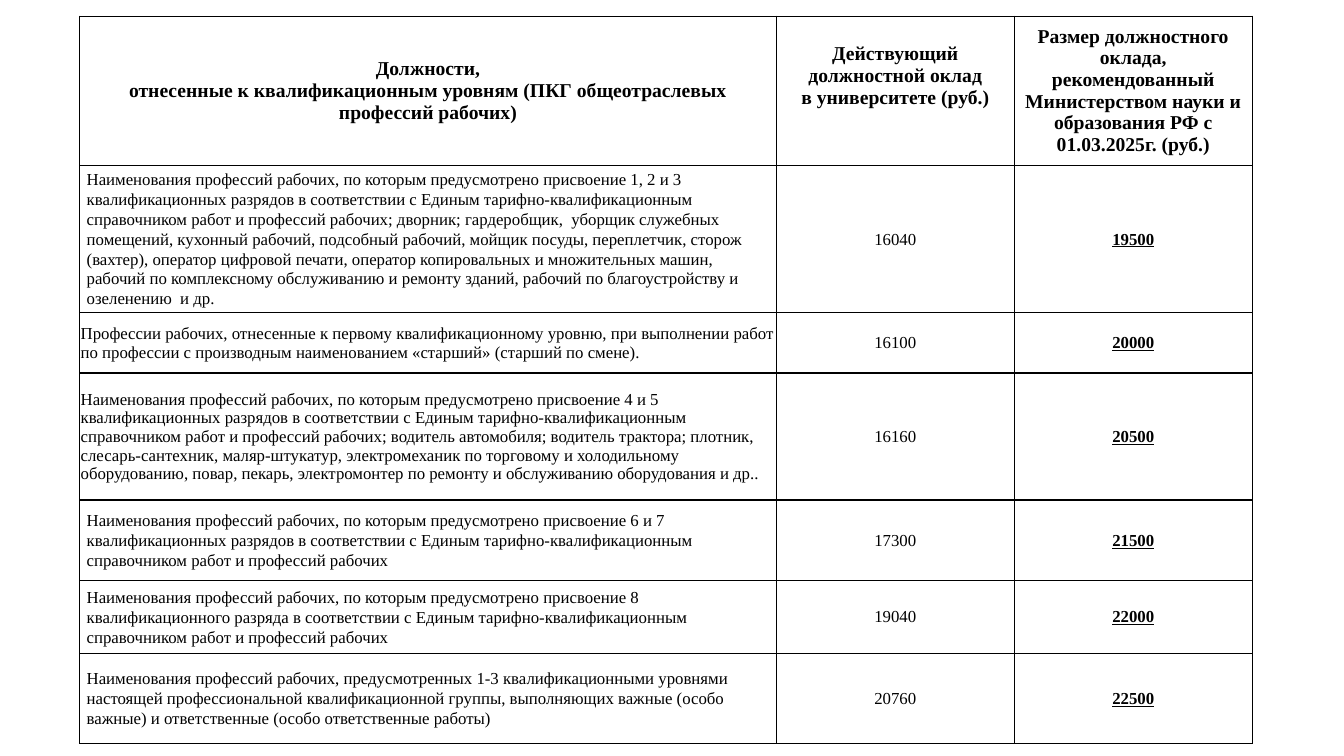
import pptx
import pptx.util
import pptx.dml.color
import pptx.enum.text
import pptx.oxml
import lxml.etree

Inches = pptx.util.Inches
Pt = pptx.util.Pt
BLACK = pptx.dml.color.RGBColor(0, 0, 0)
WHITE = pptx.dml.color.RGBColor(255, 255, 255)
FONT = "Times New Roman"
MIDDLE = pptx.enum.text.MSO_ANCHOR.MIDDLE
TOP = pptx.enum.text.MSO_ANCHOR.TOP
CENTER = pptx.enum.text.PP_ALIGN.CENTER
LEFT = pptx.enum.text.PP_ALIGN.LEFT

COLUMN_WIDTHS = [6.91, 2.36, 2.36]
ROW_HEIGHTS = [1.48, 1.46, 0.6, 1.26, 0.8, 0.72, 0.9]

# Margins run left, top, right, bottom
TIGHT = (0.01, 0.01, 0.01, 0)
INDENTED = (0.07, 0, 0.07, 0)

HEADERS = [
    ("Должности,\nотнесенные к квалификационным уровням (ПКГ общеотраслевых профессий рабочих)",
     (0, 0, 0, 0), MIDDLE),
    ("Действующий должностной оклад\nв университете (руб.)",
     (0.1, 0.27, 0.1, 0.05), TOP),
    ("Размер должностного оклада, рекомендованный Министерством науки и образования РФ "
     "с 01.03.2025г. (руб.)",
     (0.1, 0.05, 0.1, 0.05), MIDDLE),
]

# Positions, their margins and line spacing, current salary, recommended salary
POSITIONS = [
    ("Наименования профессий рабочих, по которым предусмотрено присвоение 1, 2 и 3 "
     "квалификационных разрядов в соответствии с Единым тарифно-квалификационным "
     "справочником работ и профессий рабочих; дворник; гардеробщик,  уборщик служебных "
     "помещений, кухонный рабочий, подсобный рабочий, мойщик посуды, переплетчик, сторож "
     "(вахтер), оператор цифровой печати, оператор копировальных и множительных машин, "
     "рабочий по комплексному обслуживанию и ремонту зданий, рабочий по благоустройству и "
     "озеленению  и др.", INDENTED, 1.07, "16040", "19500"),
    ("Профессии рабочих, отнесенные к первому квалификационному уровню, при выполнении работ "
     "по профессии с производным наименованием «старший» (старший по смене).",
     TIGHT, 1.0, "16100", "20000"),
    ("Наименования профессий рабочих, по которым предусмотрено присвоение 4 и 5 "
     "квалификационных разрядов в соответствии с Единым тарифно-квалификационным "
     "справочником работ и профессий рабочих; водитель автомобиля; водитель трактора; плотник, "
     "слесарь-сантехник, маляр-штукатур, электромеханик по торговому и холодильному "
     "оборудованию, повар, пекарь, электромонтер по ремонту и обслуживанию оборудования и др..",
     TIGHT, 1.0, "16160", "20500"),
    ("Наименования профессий рабочих, по которым предусмотрено присвоение 6 и 7 "
     "квалификационных разрядов в соответствии с Единым тарифно-квалификационным "
     "справочником работ и профессий рабочих", INDENTED, 1.07, "17300", "21500"),
    ("Наименования профессий рабочих, по которым предусмотрено присвоение 8 "
     "квалификационного разряда в соответствии с Единым тарифно-квалификационным "
     "справочником работ и профессий рабочих", INDENTED, 1.07, "19040", "22000"),
    ("Наименования профессий рабочих, предусмотренных 1-3 квалификационными "
     "уровнями настоящей профессиональной квалификационной группы, выполняющих важные "
     "(особо важные) и ответственные (особо ответственные работы)",
     INDENTED, 1.07, "20760", "22500"),
]


def add_borders(cell):
    properties = cell._tc.get_or_add_tcPr()
    for position, side in enumerate(["lnL", "lnR", "lnT", "lnB"]):
        border = pptx.oxml.parse_xml(
            f'<a:{side} xmlns:a="http://schemas.openxmlformats.org/drawingml/2006/main" '
            f'w="{Pt(1)}"><a:solidFill><a:srgbClr val="{BLACK}"/></a:solidFill></a:{side}>')
        properties.insert(position, border)


def fill_cell(cell, text, margins, size, align=CENTER, anchor=MIDDLE,
              bold=False, underline=False, spacing=1.0):
    cell.text = text
    cell.vertical_anchor = anchor
    (cell.margin_left, cell.margin_top,
     cell.margin_right, cell.margin_bottom) = map(Inches, margins)
    cell.fill.solid()
    cell.fill.fore_color.rgb = WHITE
    add_borders(cell)
    for paragraph in cell.text_frame.paragraphs:
        paragraph.alignment = align
        paragraph.line_spacing = spacing
        paragraph.font.name = FONT
        paragraph.font.size = Pt(size)
        paragraph.font.bold = bold
        paragraph.font.underline = underline
        paragraph.font.color.rgb = BLACK


deck = pptx.Presentation()
deck.slide_width = Inches(13.33)
deck.slide_height = Inches(7.5)
page = deck.slides.add_slide(deck.slide_layouts[6])

frame = page.shapes.add_table(
    len(ROW_HEIGHTS), len(COLUMN_WIDTHS), Inches(0.79), Inches(0.16),
    Inches(sum(COLUMN_WIDTHS)), Inches(sum(ROW_HEIGHTS)))
salaries = frame.table
salaries.horz_banding = False
for column, width in zip(salaries.columns, COLUMN_WIDTHS):
    column.width = Inches(width)
for row, height in zip(salaries.rows, ROW_HEIGHTS):
    row.height = Inches(height)

for column_index, (text, margins, anchor) in enumerate(HEADERS):
    fill_cell(salaries.cell(0, column_index), text, margins, 14, anchor=anchor, bold=True)

for row_index, (text, margins, spacing, current, recommended) in enumerate(POSITIONS, 1):
    fill_cell(salaries.cell(row_index, 0), text, margins, 12, align=LEFT, spacing=spacing)
    fill_cell(salaries.cell(row_index, 1), current, TIGHT, 12)
    fill_cell(salaries.cell(row_index, 2), recommended, TIGHT, 12, bold=True, underline=True)

deck.save("out.pptx")
